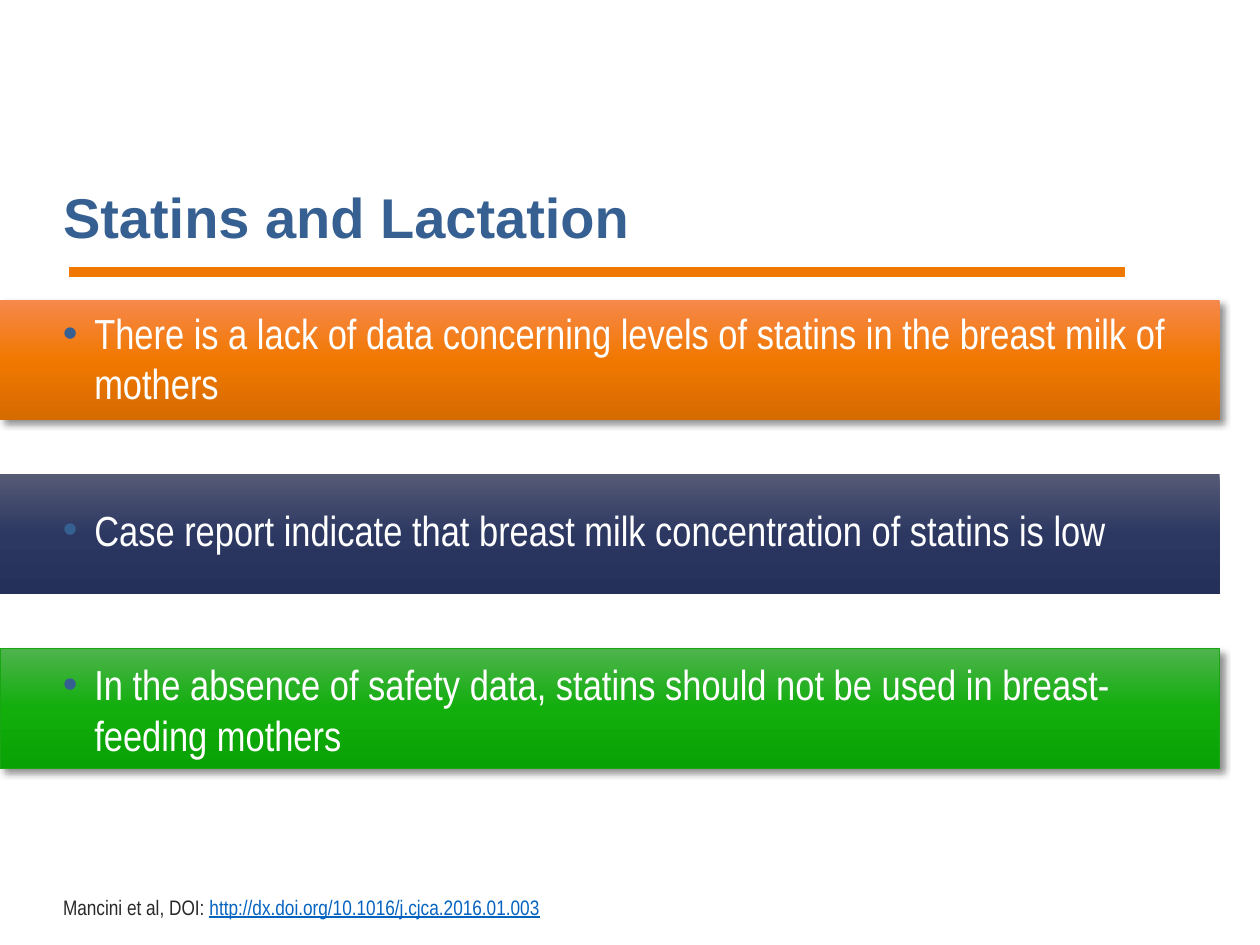
from copy import deepcopy

from lxml import etree
from pptx import Presentation
from pptx.dml.color import RGBColor
from pptx.enum import shapes, text
from pptx.oxml.ns import qn
from pptx.util import Pt

WHITE = RGBColor(0xFF, 0xFF, 0xFF)
BLUE = RGBColor(0x37, 0x60, 0x92)
ORANGE = RGBColor(0xF1, 0x78, 0x00)
DARK = RGBColor(0x28, 0x29, 0x28)
LINK = RGBColor(0x05, 0x63, 0xC1)
GREEN_EDGE = RGBColor(0x18, 0xA7, 0x13)
ORANGE_FADE = (RGBColor(0xF6, 0x88, 0x4B), ORANGE, RGBColor(0xD6, 0x6B, 0x00))
NAVY_FADE = (RGBColor(0x55, 0x5A, 0x75), RGBColor(0x2D, 0x38, 0x62),
             RGBColor(0x25, 0x30, 0x5A))
GREEN_FADE = (RGBColor(0x4D, 0xB3, 0x4C), RGBColor(0x11, 0xAE, 0x0C),
              RGBColor(0x09, 0xA2, 0x04))

LEFT, RIGHT = 28.8, 697
BAR_TOP, BAR_HEIGHT, BAR_PITCH = 171.4, 68.4, 99.7

# wording, gradient, edge, shadow, offset of the text below the bar's top
BARS = [
    ("There is a lack of data concerning levels of statins in the breast milk "
     "of mothers", ORANGE_FADE, None, True, 0.7),
    ("Case report indicate that breast milk concentration of statins is low",
     NAVY_FADE, None, False, 13.5),
    ("In the absence of safety data, statins should not be used in "
     "breast-feeding mothers", GREEN_FADE, GREEN_EDGE, True, 2.2),
]


def add_text(p, wording, size=24, font="Arial Narrow", color=WHITE,
             bold=False, underline=False):
    r = p.add_run()
    r.text = wording
    r.font.size, r.font.name = Pt(size), font
    r.font.bold, r.font.underline = bold, underline
    r.font.color.rgb = color
    return r


def place(sp, box):
    sp.left, sp.top, sp.width, sp.height = (Pt(v) for v in box)


def setup_frame(sp, anchor):
    tf = sp.text_frame
    tf.word_wrap = True
    tf.auto_size = text.MSO_AUTO_SIZE.NONE
    tf.vertical_anchor = anchor
    return tf.paragraphs[0]


def set_bullet(p, char=None, color=None, indent=0):
    pPr = p._p.get_or_add_pPr()
    pPr.set("marL", str(Pt(indent)))
    pPr.set("indent", str(-Pt(indent)))
    if char is None:
        etree.SubElement(pPr, qn("a:buNone"))
        return
    clr = etree.SubElement(pPr, qn("a:buClr"))
    etree.SubElement(clr, qn("a:srgbClr"), val=str(color))
    etree.SubElement(pPr, qn("a:buFont"), typeface="Arial")
    etree.SubElement(pPr, qn("a:buChar"), char=char)


def set_gradient(sp, colors):
    sp.fill.gradient()
    sp.fill.gradient_angle = 270
    stops = sp.element.spPr.find(qn("a:gradFill")).find(qn("a:gsLst"))
    stops.insert(1, deepcopy(stops[0]))
    for i, (stop, color) in enumerate(zip(sp.fill.gradient_stops, colors)):
        stop.position = i / 2
        stop.color.rgb = color


def add_shadow(sp):
    effects = sp.element.spPr.find(qn("a:effectLst"))
    shadow = etree.SubElement(effects, qn("a:outerShdw"), blurRad=str(Pt(4)),
                              dist=str(Pt(3)), dir="2700000", algn="tl",
                              rotWithShape="0")
    clr = etree.SubElement(shadow, qn("a:srgbClr"), val="000000")
    etree.SubElement(clr, qn("a:alpha"), val="43000")


def add_title(s, box):
    sp = s.shapes.title
    place(sp, box)
    p = setup_frame(sp, text.MSO_ANCHOR.BOTTOM)
    p.alignment = text.PP_ALIGN.LEFT
    p.line_spacing = 0.9
    add_text(p, "Statins and Lactation", size=32, font="Arial", color=BLUE,
             bold=True)


def add_rule(s, x1, x2, y):
    line = s.shapes.add_connector(shapes.MSO_CONNECTOR.STRAIGHT,
                                  Pt(x1), Pt(y), Pt(x2), Pt(y))
    line.line.color.rgb = ORANGE
    line.line.width = Pt(6)
    etree.SubElement(line.element.spPr, qn("a:effectLst"))


def add_bar(s, box, wording, fade, edge, shadow, offset):
    # Coloured band
    x, y, w, h = box
    sp = s.shapes.add_shape(shapes.MSO_SHAPE.RECTANGLE,
                            *(Pt(v) for v in box))
    set_gradient(sp, fade)
    if edge is None:
        sp.line.fill.background()
    else:
        sp.line.color.rgb = edge
        sp.line.width = Pt(0.5)
    sp.shadow.inherit = False
    if shadow:
        add_shadow(sp)

    # Bullet text
    label = s.shapes.add_textbox(Pt(x + LEFT), Pt(y + offset),
                                 Pt(w - LEFT), Pt(74))
    p = setup_frame(label, text.MSO_ANCHOR.TOP)
    p.space_before = p.space_after = Pt(6)
    set_bullet(p, "•", BLUE, indent=18)
    add_text(p, wording)


def add_citation(s, box):
    sp = s.placeholders[1]
    place(sp, box)
    p = setup_frame(sp, text.MSO_ANCHOR.BOTTOM)
    p.space_before = Pt(0)
    set_bullet(p)
    add_text(p, "Mancini et al, DOI: ", size=12, color=DARK)
    add_text(p, "http://dx.doi.org/10.1016/j.cjca.2016.01.003", size=12,
             color=LINK, underline=True)


def main():
    prs = Presentation()
    prs.slide_width, prs.slide_height = Pt(720), Pt(540)
    s = prs.slides.add_slide(prs.slide_layouts[1])
    add_title(s, (LEFT, 77, RIGHT - LEFT, 69.8))
    add_rule(s, 39.6, 643, 155.5)
    for i, bar in enumerate(BARS):
        add_bar(s, (0, BAR_TOP + i * BAR_PITCH, RIGHT, BAR_HEIGHT), *bar)
    add_citation(s, (LEFT, 500.4, RIGHT - LEFT, 28.8))
    prs.save("out.pptx")


if __name__ == "__main__":
    main()
